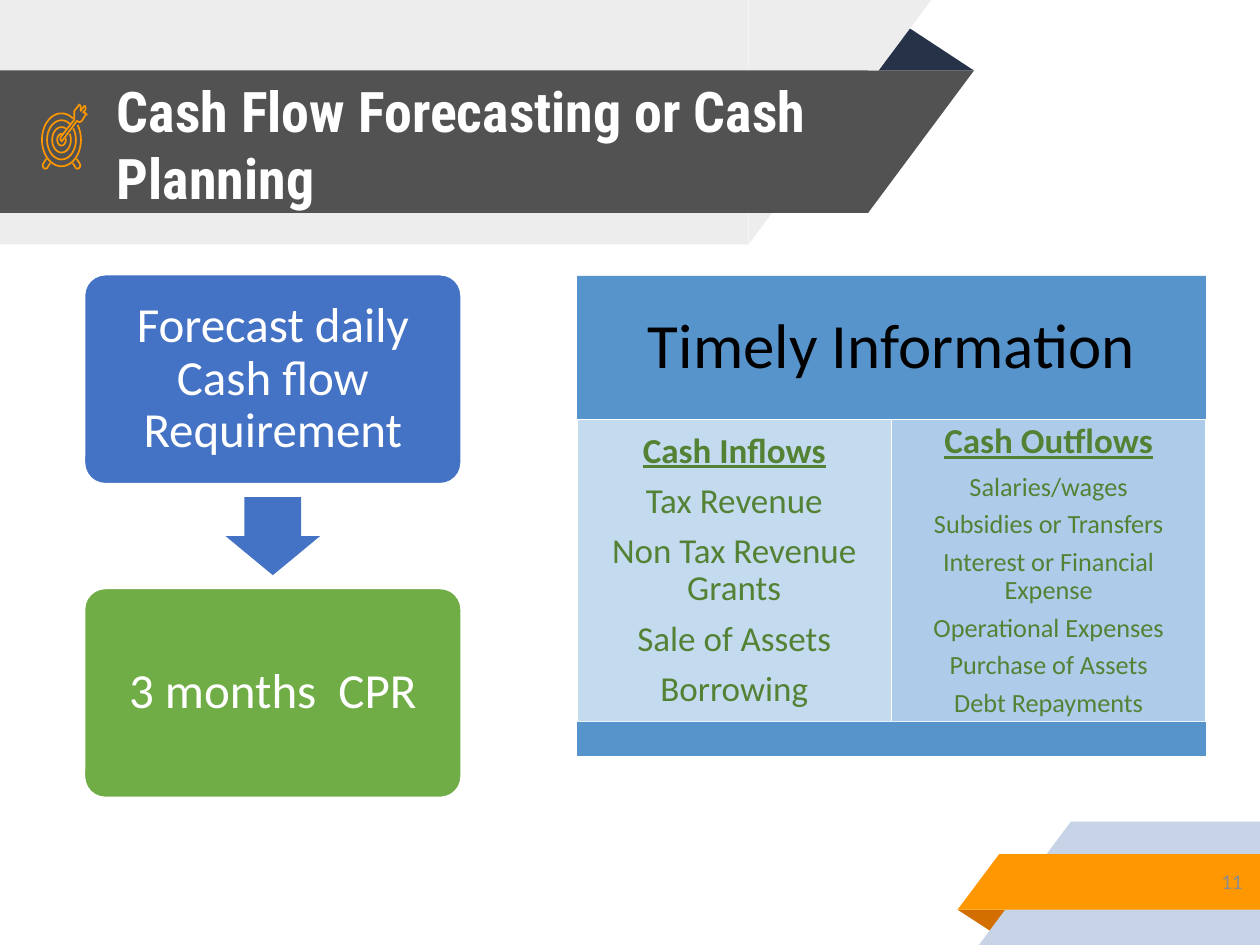
from math import cos, radians, sin

from lxml import etree
from pptx import Presentation
from pptx.dml.color import RGBColor
from pptx.enum.shapes import MSO_SHAPE
from pptx.enum.text import MSO_ANCHOR, PP_ALIGN
from pptx.oxml.ns import qn
from pptx.util import Inches, Pt

RECT, ROUND = MSO_SHAPE.RECTANGLE, MSO_SHAPE.ROUNDED_RECTANGLE
WEDGE, PEAK = MSO_SHAPE.RIGHT_TRIANGLE, MSO_SHAPE.ISOSCELES_TRIANGLE
ARROW = MSO_SHAPE.RIGHT_ARROW
LEFT, MID, RIGHT = PP_ALIGN.LEFT, PP_ALIGN.CENTER, PP_ALIGN.RIGHT
CENTRE = MSO_ANCHOR.MIDDLE

WHITE, BLUE, GREEN, ORANGE = "FFFFFF", "4472C4", "70AD47", "FF9800"
STEEL, LEAF = "5794CB", "548235"

prs = Presentation()
prs.slide_width, prs.slide_height = Inches(10), Inches(7.5)
slide = prs.slides.add_slide(prs.slide_layouts[6])
CELL = prs.slide_width / 100  # the grid has 100 columns and 75 rows


def emu(*cells):
    return [round(n * CELL) for n in cells]


def paint(value):
    return RGBColor.from_string(value)


def add(kind, box, fill, edge=None, adj=(), turn=0, flip=False, alpha=None):
    shape = slide.shapes.add_shape(kind, *emu(*box))
    shape.shadow.inherit = False
    shape.fill.solid()
    shape.fill.fore_color.rgb = paint(fill)
    if alpha:
        tint = shape._element.spPr.find(qn("a:solidFill"))[0]
        etree.SubElement(tint, qn("a:alpha")).set("val", str(alpha * 1000))
    if edge:
        shape.line.color.rgb = paint(edge)
        shape.line.width = Pt(1)
    else:
        shape.line.fill.background()
    for i, part in enumerate(adj):
        shape.adjustments[i] = part
    shape.rotation = turn
    if flip:
        shape._element.spPr.xfrm.set("flipH", "1")
    return shape


def write(shape, lines, color, inset, align=MID, face="Calibri", tight=True):
    """Each line is (text, size, bold, underline)."""
    frame = shape.text_frame
    frame.word_wrap = True
    frame.vertical_anchor = CENTRE
    frame.margin_left = frame.margin_right = Inches(inset)
    frame.margin_top = frame.margin_bottom = Inches(inset)
    for i, (text, size, bold, under) in enumerate(lines):
        para = frame.add_paragraph() if i else frame.paragraphs[0]
        para.text = text
        para.alignment = align
        if tight:
            para.line_spacing = 0.9
            para.space_after = Pt(0.35 * size)
        font = para.font
        font.name, font.size = face, Pt(size)
        font.bold, font.underline = bold, under
        font.color.rgb = paint(color)


def label(box, *args, **style):
    write(slide.shapes.add_textbox(*emu(*box)), *args, **style)


def band(box, tip, fill, left=False):
    """A bar whose right or left end is cut to a slant."""
    x, y, w, h = box
    body, end = (x + tip, x) if left else (x, x + w - tip)
    add(RECT, (body, y, w - tip, h), fill)
    add(WEDGE, (end, y, tip, h), fill, turn=0 if left else 180, flip=True)


def trace(points, close=False):
    dots = [emu(*dot) for dot in points]
    pen = slide.shapes.build_freeform(*dots[0])
    pen.add_line_segments(dots[1:], close=close)
    shape = pen.convert_to_shape()
    shape.shadow.inherit = False
    shape.fill.background()
    shape.line.color.rgb = paint(ORANGE)
    shape.line.width = Pt(0.96)


def target(box):
    x, y, w, h = box
    mid, hub = x + 0.44 * w, y + 0.56 * h
    # radius as a share of the outer ring, and half the gap in degrees
    for size, gap in ((1, 10), (0.74, 8), (0.22, 30), (0.48, 16)):
        turns = [radians(44 + gap + i * (360 - 2 * gap) / 48) for i in range(49)]
        trace([(mid + 0.43 * w * size * cos(t), hub - 0.42 * h * size * sin(t))
               for t in turns])
    foot = ((1.2, 1.5), (1.4, 1.2), (1.5, 1), (1.45, 0.8), (1.3, 0.7),
            (1.15, 0.75), (0.9, 1.15))
    for side in (-1, 1):
        trace([(mid + side * a, hub + 3 - b) for a, b in
               [(a, b) for a, b in foot]])
    dart = ((2, 0.7), (1.8, 0.6), (2, 0.4), (2, 0.2), (1.9, 0.1), (1.6, 0.5),
            (1.6, 0.1), (1.5, 0), (1.1, 0.5), (1.1, 1.2), (0, 2.6), (0, 2.8),
            (0.1, 2.9), (0.2, 2.8), (1.3, 1.3), (1.5, 1.4), (1.7, 1.3),
            (2, 0.8), (2.1, 0.8))
    trace([(x + 1.5 + a, y + b) for a, b in dart], close=True)


def header(box):
    x, y, w, h = box
    add(PEAK, (x + w - 8.5, y + 1.8, 8.5, 3.8), "263248", adj=[0.32])
    band((x, y, w - 3.4, h), 14.5, "EDEDED")
    band((x, y + 5.6, w, 11.3), 8.4, "525252")
    target((x + 3.3, y + 8.3, 3.6, 5))
    label((x + 8.3, y + 5.8, 60.1, 11.2),
          [("Cash Flow Forecasting or Cash Planning", 32, True, False)],
          WHITE, 0.1, align=LEFT, face="Roboto Condensed", tight=False)


def footer(box):
    x, y, w, h = box
    add(PEAK, (x, y + 7, 4.3, 1.9), "D26F00", adj=[0.32], turn=180)
    band((x + 1.7, y, w - 1.7, h), 7.3, "C7D3E6", left=True)
    band((x, y + 2.6, w, 4.4), 3.3, ORANGE, left=True)
    label((x + 7.3, y + 2.4, 16.3, 4.6), [("11", 12, False, False)],
          "8C8C8C", 0.1, align=RIGHT, tight=False)


def flow(box):
    x, y, w, h = box
    tall = 16.6
    steps = (("Forecast daily Cash flow Requirement", BLUE, y),
             ("3 months  CPR", GREEN, y + h - tall))
    for text, fill, top in steps:
        step = add(ROUND, (x, top, w, tall), fill, edge=WHITE, adj=[0.1])
        write(step, [(text, 28, False, False)], WHITE, 0.12)
    long, wide = 6.2, 7.5
    add(ARROW, (x + (w - long) / 2, y + (h - wide) / 2, long, wide), BLUE,
        adj=[0.6, 0.5], turn=90)


def board(box):
    x, y, w, h = box
    top, base = 11.4, 2.7
    head = add(RECT, (x, y, w, top), STEEL)
    write(head, [("Timely Information", 36, False, False)], "000000", 0.15)
    lists = (
        ("Cash Inflows", 20, "BDD7EE", 90,
         ("Tax Revenue", "Non Tax Revenue Grants", "Sale of Assets",
          "Borrowing")),
        ("Cash Outflows", 15, "5B9BD5", 50,
         ("Salaries/wages", "Subsidies or Transfers",
          "Interest or Financial Expense", "Operational Expenses",
          "Purchase of Assets", "Debt Repayments")))
    for i, (name, size, fill, alpha, items) in enumerate(lists):
        cell = add(RECT, (x + i * w / 2, y + top, w / 2, h - top - base), fill,
                   edge=WHITE, alpha=alpha)
        rows = [(name, 20, True, True)]
        rows += [(item, size, False, False) for item in items]
        write(cell, rows, LEAF, 0.08)
    add(RECT, (x, y + h - base, w, base), STEEL)


header((0, 0, 77.3, 19.4))
footer((76, 65.2, 24, 9.8))
flow((6.7, 21.8, 29.9, 41.5))
board((45.8, 21.9, 49.9, 38.1))
prs.save("out.pptx")
